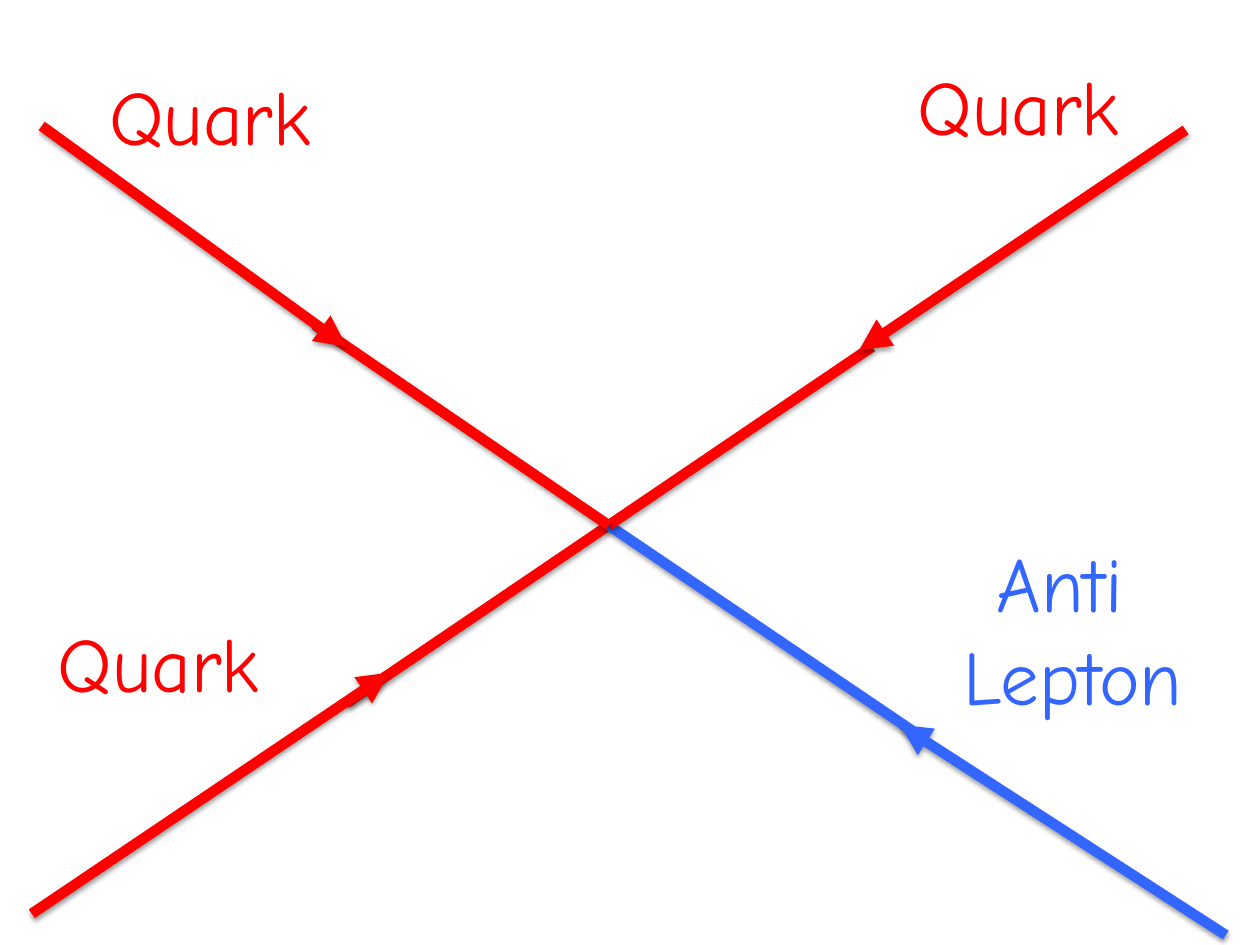
from lxml.etree import SubElement
from pptx import Presentation
from pptx.dml.color import RGBColor
from pptx.enum.shapes import MSO_CONNECTOR
from pptx.enum.text import MSO_ANCHOR, MSO_AUTO_SIZE, PP_ALIGN
from pptx.oxml import parse_xml
from pptx.oxml.ns import nsdecls, qn
from pptx.util import Cm, Pt

COLORS = {"quark": "FF0000", "lepton": "3366FF", "shadow": "000000"}
FONT = "Comic Neue"
VERTEX = (12.27, 10.59)
QUARK_SIZE = (5.11, 2.13)

# Each particle: colour, outer end, arrow tip, inner line end,
# label lines, label position and label size (all in cm)
PARTICLES = [
    ("quark", (0.64, 18.42), (7.85, 13.56), (6.99, 14.17),
     ["Quark"], (0.64, 12.27), QUARK_SIZE),
    ("lepton", (24.71, 18.85), (18.14, 14.61), (18.39, 14.73),
     ["Anti ", "Lepton"], (18.9, 10.64), (5.46, 4.01)),
    ("quark", (23.9, 2.62), (17.32, 7.06), (17.58, 6.99),
     ["Quark"], (17.98, 1.04), QUARK_SIZE),
    ("quark", (0.84, 2.54), (6.99, 6.99), (6.35, 6.55),
     ["Quark"], (1.68, 1.24), QUARK_SIZE),
]


def add_line(slide, start, end, color, arrow=False):
    """Draw a thick shadowed line, with an arrowhead at its end if asked."""
    points = [Cm(value) for value in (*start, *end)]
    line = slide.shapes.add_connector(MSO_CONNECTOR.STRAIGHT, *points)
    line.line.color.rgb = RGBColor.from_string(COLORS[color])
    line.line.width = Pt(6)
    if arrow:
        SubElement(line.line._get_or_add_ln(), qn("a:tailEnd"), type="triangle")
    line._element.spPr.append(parse_xml(
        f'<a:effectLst {nsdecls("a")}>'
        f'<a:outerShdw blurRad="{Pt(3.1)}" dist="{Pt(1.6)}" dir="5400000" rotWithShape="0">'
        f'<a:srgbClr val="{COLORS["shadow"]}"><a:alpha val="38000"/></a:srgbClr>'
        '</a:outerShdw></a:effectLst>'))


def add_label(slide, lines, position, size, color):
    """Write a centred particle name, one paragraph per line."""
    label = slide.shapes.add_textbox(*[Cm(value) for value in (*position, *size)])
    frame = label.text_frame
    frame.text = "\n".join(lines)
    frame.word_wrap = False
    frame.auto_size = MSO_AUTO_SIZE.SHAPE_TO_FIT_TEXT
    frame.vertical_anchor = MSO_ANCHOR.BOTTOM
    for paragraph in frame.paragraphs:
        paragraph.alignment = PP_ALIGN.CENTER
        for run in paragraph.runs:
            run.font.name = FONT
            run.font.size = Pt(44)
            run.font.color.rgb = RGBColor.from_string(COLORS[color])


def main():
    deck = Presentation()
    deck.slide_width, deck.slide_height = Cm(25.4), Cm(19.05)
    slide = deck.slides.add_slide(deck.slide_layouts[6])

    for color, outer, tip, inner, name, position, size in PARTICLES:
        # Inner half to the vertex, then the incoming arrow over it
        add_line(slide, VERTEX, inner, color)
        add_line(slide, outer, tip, color, arrow=True)
        add_label(slide, name, position, size, color)

    deck.save("out.pptx")


if __name__ == "__main__":
    main()
